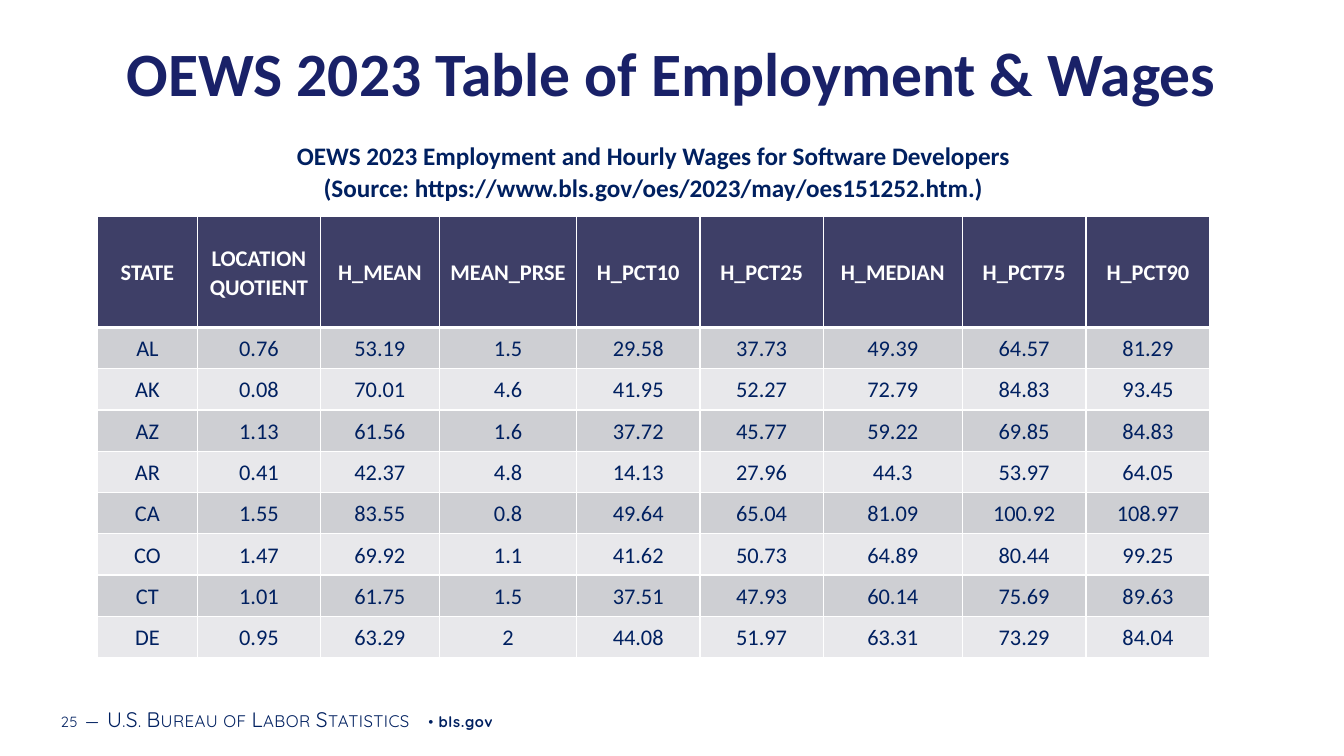
from dataclasses import dataclass

from lxml.etree import SubElement
from pptx import Presentation
from pptx.dml.color import RGBColor as Color
from pptx.enum.text import MSO_ANCHOR as Anchor, MSO_AUTO_SIZE as AutoSize, PP_ALIGN as Align
from pptx.oxml.ns import qn
from pptx.util import Cm, Pt


@dataclass(frozen=True)
class Theme:
    body_font: str = "Calibri"
    footer_font: str = "Quicksand"
    title: str = "192168"
    navy: str = "002060"
    white: str = "FFFFFF"
    header: str = "3E3F67"
    bands: tuple = ("CECFD3", "E8E8EB")
    title_size: float = 44
    caption_size: float = 18
    cell_size: float = 16
    agency_size: float = 15
    small_size: float = 10.5


THEME = Theme()

CAPTION = (
    "OEWS 2023 Employment and Hourly Wages for Software Developers",
    "(Source: https://www.bls.gov/oes/2023/may/oes151252.htm.)",
)
HEADINGS = ("STATE", "LOCATION\vQUOTIENT", "H_MEAN", "MEAN_PRSE", "H_PCT10",
            "H_PCT25", "H_MEDIAN", "H_PCT75", "H_PCT90")
WAGES = (
    ("AL", "0.76", "53.19", "1.5", "29.58", "37.73", "49.39", "64.57", "81.29"),
    ("AK", "0.08", "70.01", "4.6", "41.95", "52.27", "72.79", "84.83", "93.45"),
    ("AZ", "1.13", "61.56", "1.6", "37.72", "45.77", "59.22", "69.85", "84.83"),
    ("AR", "0.41", "42.37", "4.8", "14.13", "27.96", "44.3", "53.97", "64.05"),
    ("CA", "1.55", "83.55", "0.8", "49.64", "65.04", "81.09", "100.92", "108.97"),
    ("CO", "1.47", "69.92", "1.1", "41.62", "50.73", "64.89", "80.44", "99.25"),
    ("CT", "1.01", "61.75", "1.5", "37.51", "47.93", "60.14", "75.69", "89.63"),
    ("DE", "0.95", "63.29", "2", "44.08", "51.97", "63.31", "73.29", "84.04"),
)
COLUMN_WIDTHS = (2.53, 3.09, 3.01, 3.45, 3.11, 3.11, 3.5, 3.12, 3.12)
HEADER_HEIGHT, ROW_HEIGHT = 2.79, 1.04


def set_all(target, values):
    for name, value in values.items():
        setattr(target, name, value)


def format_span(span, size, color, bold=False, font=THEME.body_font):
    set_all(span.font, {"name": font, "size": Pt(size), "bold": bold})
    span.font.color.rgb = Color.from_string(color)


def write_para(para, text, size, color, bold=False, **spacing):
    para.text = text
    set_all(para, {"alignment": Align.CENTER, **spacing})
    for span in para.runs:
        format_span(span, size, color, bold)


def add_title(page, box):
    title = page.shapes.title
    set_all(title, dict(zip(("left", "top", "width", "height"), box)))
    set_all(title.text_frame, {"word_wrap": True, "auto_size": AutoSize.NONE,
                               "vertical_anchor": Anchor.TOP})
    write_para(title.text_frame.paragraphs[0], "OEWS 2023 Table of Employment & Wages",
               THEME.title_size, THEME.title, True)


def add_caption(page, box):
    frame = page.shapes.add_textbox(*box).text_frame
    frame.word_wrap = True
    for index, line in enumerate(CAPTION):
        para = frame.add_paragraph() if index else frame.paragraphs[0]
        write_para(para, line, THEME.caption_size, THEME.navy, True, line_spacing=0.9,
                   space_before=Pt(0.2 * THEME.caption_size if index else 0))


def add_borders(cell, widths):
    properties = cell._tc.get_or_add_tcPr()
    for side, width in zip(("lnL", "lnR", "lnT", "lnB"), widths):
        line = SubElement(properties, qn(f"a:{side}"), w=str(Pt(width)))
        fill = SubElement(line, qn("a:solidFill"))
        SubElement(fill, qn("a:srgbClr"), val=THEME.white)


def add_wage_table(page, box):
    rows = (HEADINGS, *WAGES)
    table = page.shapes.add_table(len(rows), len(HEADINGS), *box).table
    for column, width in zip(table.columns, COLUMN_WIDTHS):
        column.width = Cm(width)
    for index, values in enumerate(rows):
        is_header = index == 0
        table.rows[index].height = Cm(HEADER_HEIGHT if is_header else ROW_HEIGHT)
        fill = THEME.header if is_header else THEME.bands[(index - 1) % 2]
        color = THEME.white if is_header else THEME.navy
        borders = (1, 1, 3 if index == 1 else 1, 3 if is_header else 1)
        for cell, text in zip(table.rows[index].cells, values):
            set_all(cell, {"vertical_anchor": Anchor.MIDDLE, "margin_left": Cm(0.15),
                           "margin_right": Cm(0.15), "margin_top": 0, "margin_bottom": 0})
            add_borders(cell, borders)
            cell.fill.solid()
            cell.fill.fore_color.rgb = Color.from_string(fill)
            write_para(cell.text_frame.paragraphs[0], text, THEME.cell_size, color,
                       is_header, line_spacing=1.07, space_after=Pt(8))


def add_footer(page, box):
    frame = page.shapes.add_textbox(*box).text_frame
    set_all(frame, {"word_wrap": True, "vertical_anchor": Anchor.MIDDLE,
                    "margin_left": Cm(0.18), "margin_right": Cm(0.18),
                    "margin_top": Cm(0.1), "margin_bottom": Cm(0.1)})
    small, agency, gap = THEME.small_size, THEME.agency_size, THEME.cell_size
    for text, size, bold, caps, tracking in (
        ("25", small, False, "none", 50),
        (" ", gap, False, "none", 50),
        ("—", agency, False, "small", 30),
        (" ", gap, False, "none", 50),
        ("U.S. Bureau of Labor Statistics", agency, False, "small", 30),
        (" • ", small, False, "none", 50),
        ("bls.gov", small, True, "none", 50),
    ):
        span = frame.paragraphs[0].add_run()
        span.text = text
        format_span(span, size, THEME.navy, bold, THEME.footer_font)
        properties = span._r.get_or_add_rPr()
        properties.set("cap", caps)
        properties.set("spc", str(tracking))


def main():
    deck = Presentation()
    set_all(deck, {"slide_width": Cm(33.87), "slide_height": Cm(19.05)})
    page = deck.slides.add_slide(deck.slide_layouts[5])
    left, width = Cm(2.45), Cm(sum(COLUMN_WIDTHS))
    add_footer(page, (Cm(1.35), Cm(17.6), Cm(21.5), Cm(1.02)))
    add_title(page, (Cm(1.37), Cm(0.76), Cm(31.12), Cm(3.05)))
    add_caption(page, (left, Cm(3.5), width, Cm(1.3)))
    add_wage_table(page, (left, Cm(5.46), width, Cm(HEADER_HEIGHT + len(WAGES) * ROW_HEIGHT)))
    deck.save("out.pptx")


if __name__ == "__main__":
    main()
